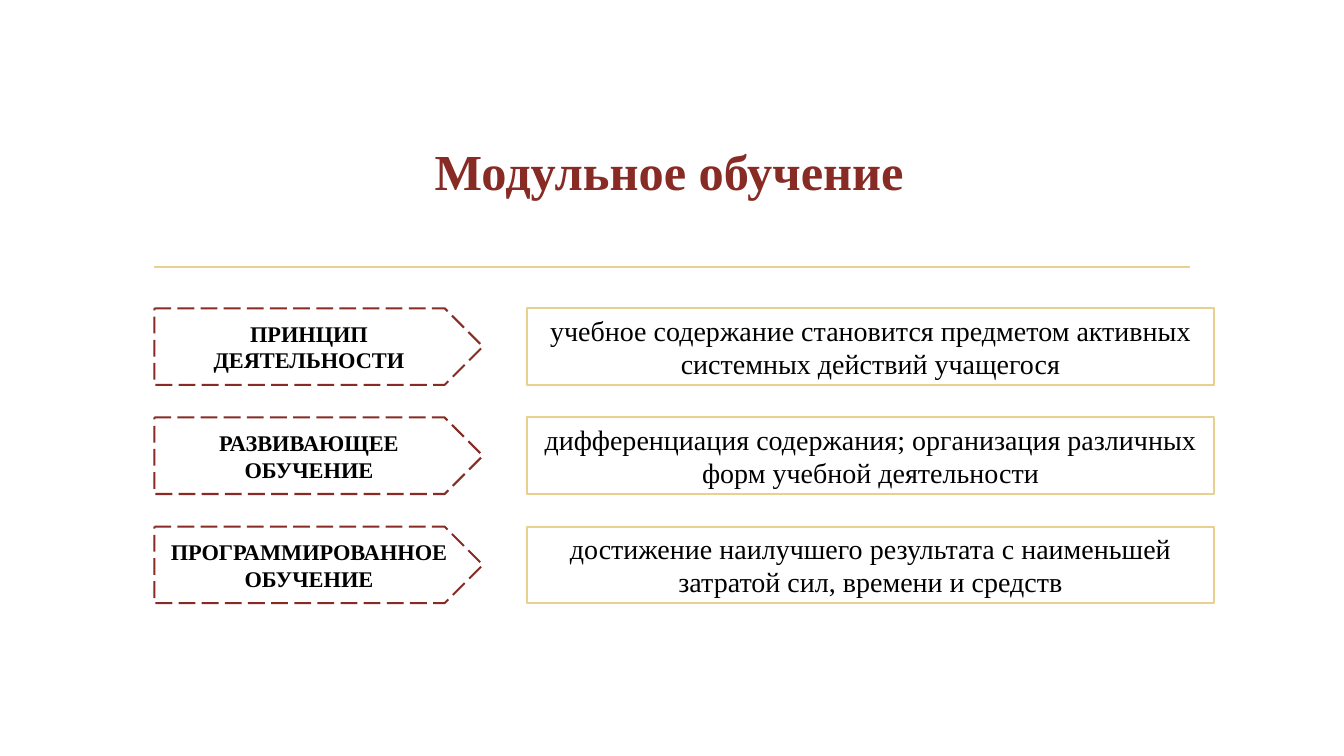
"""Builds the slide on modular learning and its three sources."""
from dataclasses import dataclass

from pptx import Presentation
from pptx import util as u
from pptx.dml.color import RGBColor
from pptx.enum import dml, shapes, text
from pptx.oxml.ns import qn


@dataclass(frozen=True)
class Theme:
    font: str = "Times New Roman"
    red: RGBColor = RGBColor(0x87, 0x2B, 0x24)
    gold: RGBColor = RGBColor(0xE8, 0xD0, 0x8F)
    black: RGBColor = RGBColor(0, 0, 0)
    white: RGBColor = RGBColor(255, 255, 255)
    title: int = 36
    label: int = 16
    body: int = 20


THEME = Theme()
LEFT, TOP, PITCH, HEIGHT = 3.89, 7.77, 2.75, 1.93
ROWS = (
    ("ПРИНЦИП ДЕЯТЕЛЬНОСТИ",
     "учебное содержание становится предметом активных системных действий учащегося"),
    ("РАЗВИВАЮЩЕЕ ОБУЧЕНИЕ",
     "дифференциация содержания; организация различных форм учебной деятельности"),
    ("ПРОГРАММИРОВАННОЕ ОБУЧЕНИЕ",
     "достижение наилучшего результата с наименьшей затратой сил, времени и средств"),
)


def write(shape, words, size, color=THEME.black, bold=False):
    frame = shape.text_frame
    frame.word_wrap = True
    frame.vertical_anchor = text.MSO_ANCHOR.MIDDLE
    para = frame.paragraphs[0]
    para.alignment = text.PP_ALIGN.CENTER
    run = para.add_run()
    run.text = words
    run.font.name = THEME.font
    run.font.size = u.Pt(size)
    run.font.bold = bold
    run.font.color.rgb = color


def add_box(slide, kind, left, top, width, color, dash=None):
    box = slide.shapes.add_shape(
        kind, u.Cm(left), u.Cm(top), u.Cm(width), u.Cm(HEIGHT))
    box.shadow.inherit = False
    box.fill.solid()
    box.fill.fore_color.rgb = THEME.white
    box.line.color.rgb = color
    box.line.width = u.Pt(1.5)
    if dash:
        box.line.dash_style = dash
    return box


def add_rule(slide, left, right, top):
    rule = slide.shapes.add_connector(
        shapes.MSO_CONNECTOR.STRAIGHT, u.Cm(left), u.Cm(top), u.Cm(right), u.Cm(top))
    rule.line.color.rgb = THEME.gold
    rule.line.width = u.Pt(1.25)
    props = rule._element.spPr
    props.append(props.makeelement(qn("a:effectLst"), {}))


def add_title(slide, words):
    box = slide.shapes.add_textbox(u.Cm(3.53), u.Cm(2.59), u.Cm(26.67), u.Cm(3.4))
    write(box, words, THEME.title, color=THEME.red, bold=True)


def add_row(slide, top, label, body):
    arrow = add_box(slide, shapes.MSO_SHAPE.PENTAGON, LEFT, top, 8.28,
                    THEME.red, dash=dml.MSO_LINE.LONG_DASH)
    write(arrow, label, THEME.label, bold=True)
    panel = add_box(slide, shapes.MSO_SHAPE.RECTANGLE, 13.28, top, 17.32, THEME.gold)
    write(panel, body, THEME.body)


def main():
    deck = Presentation()
    deck.slide_width, deck.slide_height = u.Cm(33.87), u.Cm(19.05)
    slide = deck.slides.add_slide(deck.slide_layouts[6])
    add_rule(slide, LEFT, 30, 6.73)
    add_title(slide, "Модульное обучение")
    for index, (label, body) in enumerate(ROWS):
        add_row(slide, TOP + index * PITCH, label, body)
    deck.save("out.pptx")


if __name__ == "__main__":
    main()
